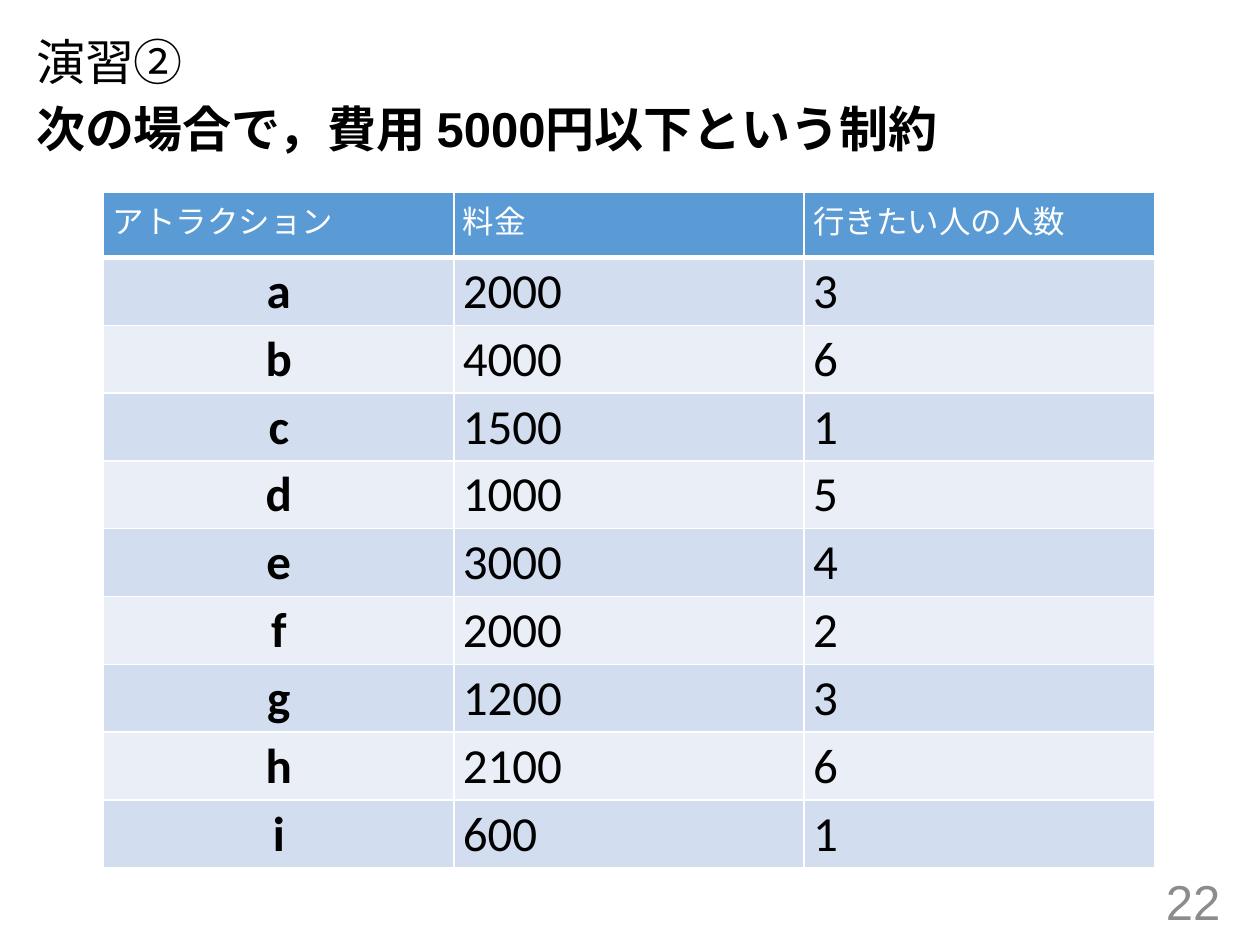
"""Build the exercise slide with its table of attraction fees and visitor counts."""
import pptx
import pptx.dml.color
import pptx.enum.lang
import pptx.enum.text
import pptx.oxml
import pptx.oxml.ns
import pptx.util

Cm = pptx.util.Cm
Pt = pptx.util.Pt
RGBColor = pptx.dml.color.RGBColor
ALIGN = pptx.enum.text.PP_ALIGN
ANCHOR = pptx.enum.text.MSO_ANCHOR

BLACK = RGBColor(0x00, 0x00, 0x00)
WHITE = RGBColor(0xFF, 0xFF, 0xFF)
GREY = RGBColor(0x8C, 0x8C, 0x8C)
BLUE = RGBColor(0x5B, 0x9B, 0xD5)
BAND_DARK = RGBColor(0xD2, 0xDE, 0xEF)
BAND_LIGHT = RGBColor(0xEA, 0xEF, 0xF7)

HEADINGS = ["演習②", "次の場合で，費用 5000円以下という制約"]
ROWS = [
    ("アトラクション", "料金", "行きたい人の人数"),
    ("a", "2000", "3"),
    ("b", "4000", "6"),
    ("c", "1500", "1"),
    ("d", "1000", "5"),
    ("e", "3000", "4"),
    ("f", "2000", "2"),
    ("g", "1200", "3"),
    ("h", "2100", "6"),
    ("i", "600", "1"),
]


def write(p, text, font, size, color, bold=False):
    p.text = text
    for r in p.runs:
        r.font.name = font
        r.font.size = Pt(size)
        r.font.bold = bold
        r.font.color.rgb = color
        r.font.language_id = pptx.enum.lang.MSO_LANGUAGE_ID.JAPANESE


def add_borders(cell, bottom):
    for side, width in (("L", 1), ("R", 1), ("T", 1), ("B", bottom)):
        cell._tc.get_or_add_tcPr().append(pptx.oxml.parse_xml(
            f'<a:ln{side} {pptx.oxml.ns.nsdecls("a")} w="{Pt(width)}">'
            f'<a:solidFill><a:srgbClr val="{WHITE}"/></a:solidFill></a:ln{side}>'))


prs = pptx.Presentation()
prs.slide_width = Cm(25.4)
prs.slide_height = Cm(19.05)
s = prs.slides.add_slide(prs.slide_layouts[6])

tf = s.shapes.add_textbox(Cm(0.48), Cm(0.64), Cm(24.43), Cm(4.22)).text_frame
tf.word_wrap = True
for i, heading in enumerate(HEADINGS):
    p = tf.add_paragraph() if i else tf.paragraphs[0]
    p.line_spacing = 0.9
    p.space_before = Pt(8 * i)
    write(p, heading, "Arial", 28, BLACK, bold=i > 0)

tf = s.shapes.add_textbox(Cm(19.13), Cm(17.65), Cm(5.72), Cm(1.02)).text_frame
tf.word_wrap = True
tf.vertical_anchor = ANCHOR.MIDDLE
p = tf.paragraphs[0]
p.alignment = ALIGN.RIGHT
write(p, "22", "Arial", 28, GREY)

table = s.shapes.add_table(len(ROWS), 3, Cm(2.09), Cm(3.87), Cm(21.18), Cm(13.2)).table
for column in table.columns:
    column.width = Cm(7.06)
for i, row in enumerate(ROWS):
    table.rows[i].height = Cm(1.32)
    is_header = i == 0
    for j, text in enumerate(row):
        cell = table.cell(i, j)
        cell.margin_left = cell.margin_right = Cm(0.18)
        cell.margin_top = cell.margin_bottom = Cm(0.09)
        add_borders(cell, 3 if is_header else 1)
        cell.fill.solid()
        p = cell.text_frame.paragraphs[0]
        if is_header:
            cell.fill.fore_color.rgb = BLUE
            write(p, text, "Calibri", 18, WHITE)
        else:
            cell.fill.fore_color.rgb = BAND_DARK if i % 2 else BAND_LIGHT
            p.alignment = ALIGN.LEFT if j else ALIGN.CENTER
            write(p, text, "Calibri", 28, BLACK, bold=j == 0)

prs.save("out.pptx")
